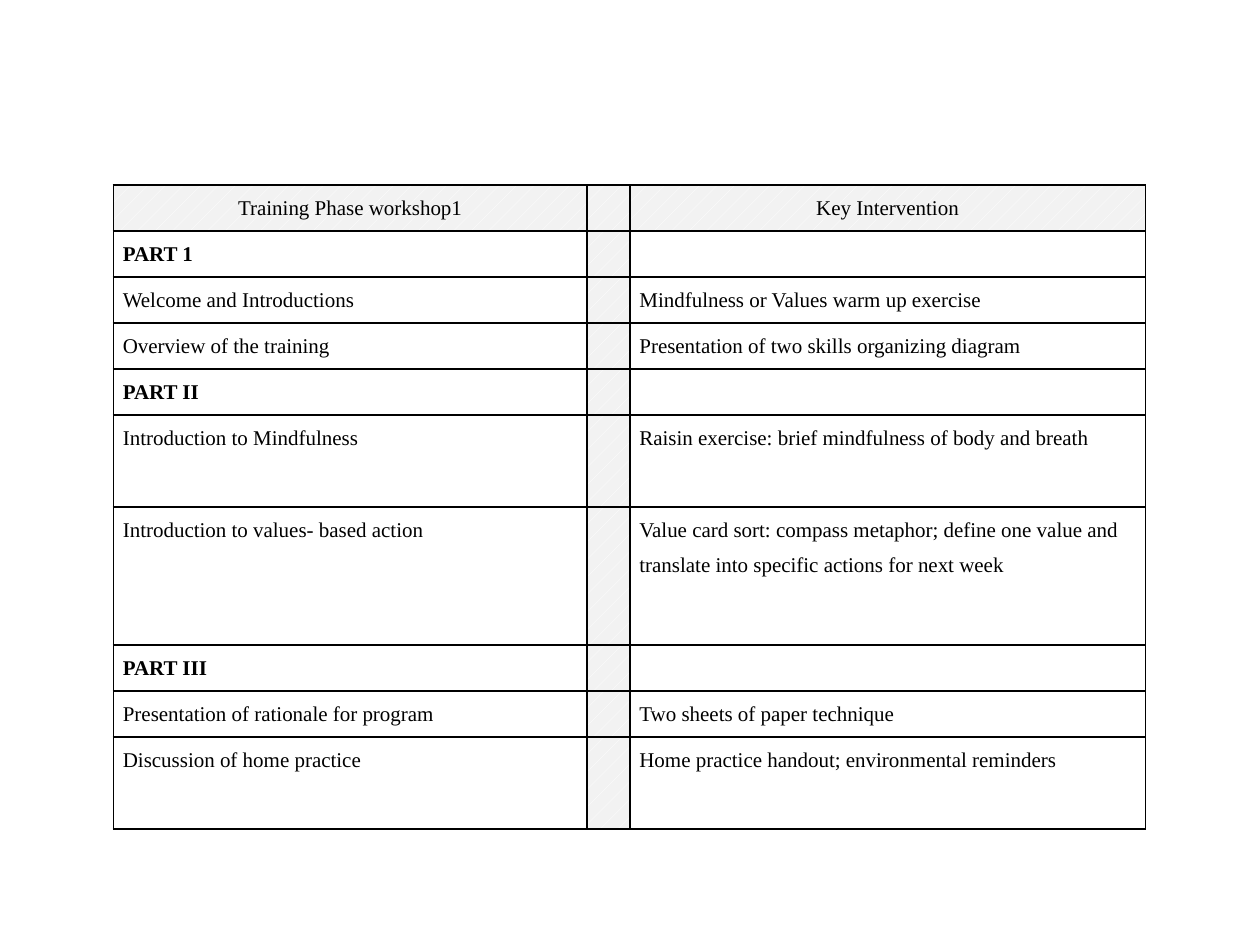
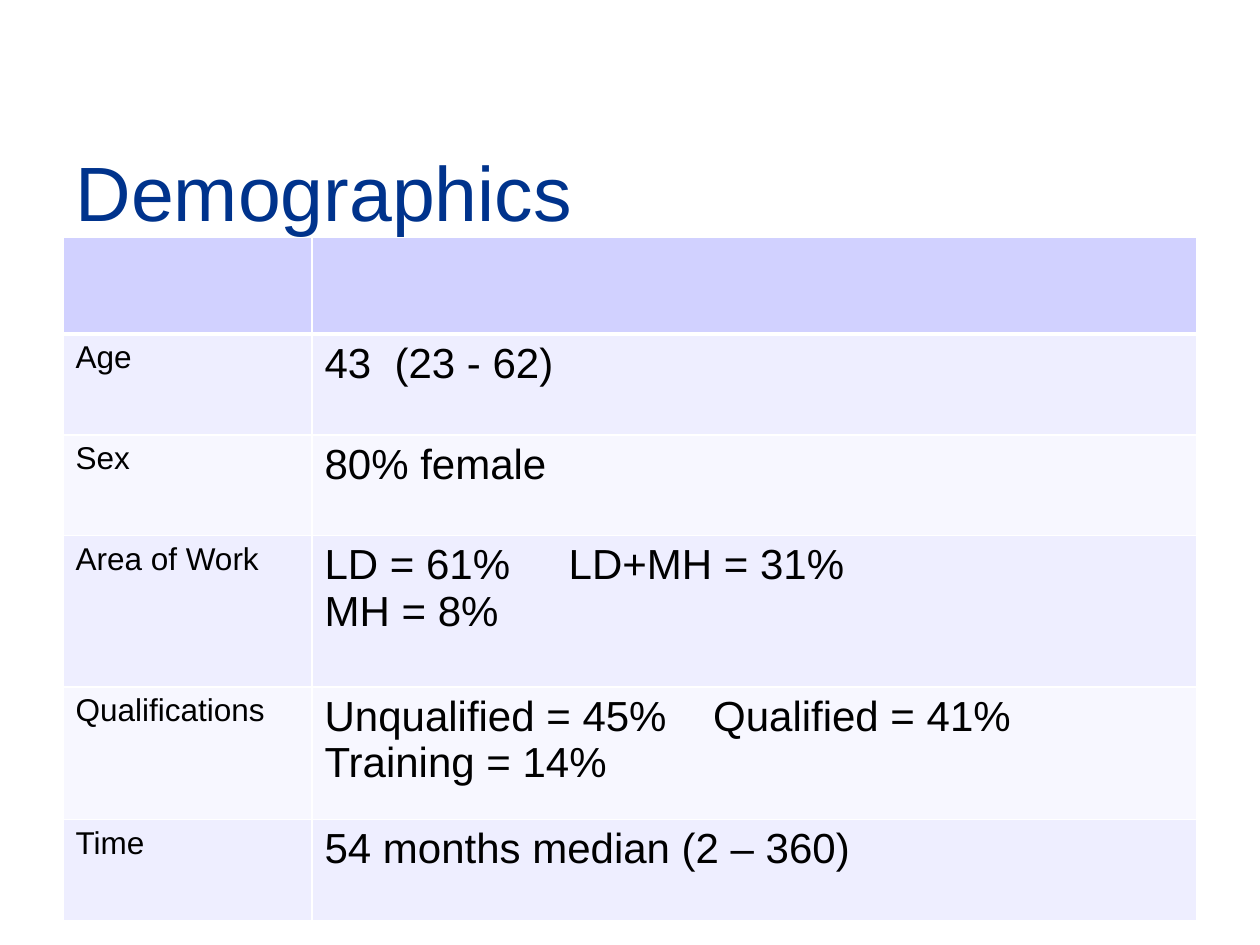
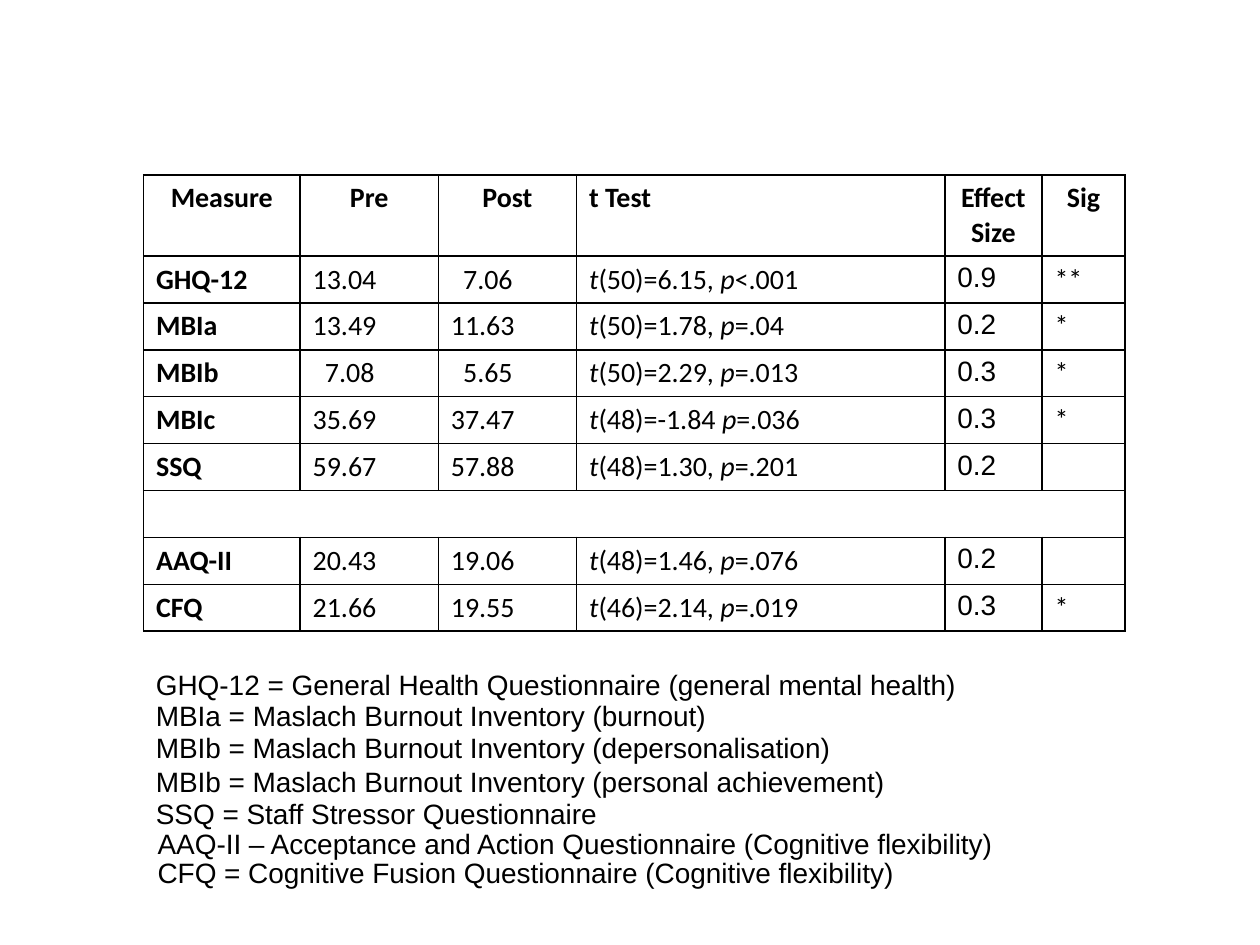
from itertools import groupby

from lxml import etree
from pptx import Presentation
from pptx.dml.color import RGBColor
from pptx.enum.dml import MSO_PATTERN
from pptx.enum.text import MSO_ANCHOR, PP_ALIGN
from pptx.oxml.ns import qn
from pptx.util import Pt

BLACK = RGBColor(0x00, 0x00, 0x00)
WHITE = RGBColor(0xFF, 0xFF, 0xFF)
NAVY = RGBColor(0x00, 0x33, 0x8C)
GREY = RGBColor(0xF2, 0xF2, 0xF2)
LAVENDER = RGBColor(0xD1, 0xD1, 0xFF)
BAND_DARK = RGBColor(0xEE, 0xEE, 0xFF)
BAND_LIGHT = RGBColor(0xF7, 0xF7, 0xFF)

LEFT, CENTER = PP_ALIGN.LEFT, PP_ALIGN.CENTER
TOP = MSO_ANCHOR.TOP
DOTTED = MSO_PATTERN.PERCENT_5

TITLE_ONLY, BLANK = 5, 6

WORKSHOP = [
    # left text, right text, height in row units
    ("Training Phase workshop1", "Key Intervention", 1),
    ("PART 1", "", 1),
    ("Welcome and Introductions", "Mindfulness or Values warm up exercise", 1),
    ("Overview of the training", "Presentation of two skills organizing diagram", 1),
    ("PART II", "", 1),
    ("Introduction to Mindfulness",
     "Raisin exercise: brief mindfulness of body and breath", 2),
    ("Introduction to values- based action",
     "Value card sort: compass metaphor; define one value and "
     "translate into specific actions for next week", 3),
    ("PART III", "", 1),
    ("Presentation of rationale for program", "Two sheets of paper technique", 1),
    ("Discussion of home practice",
     "Home practice handout; environmental reminders", 2),
]

DEMOGRAPHICS = [
    # label, value, row height, tab stop
    ("", "", 55.2, None),
    ("Age", "43\t(23 - 62)", 57.6, 40),
    ("Sex", "80% female", 57.6, None),
    ("Area of Work", "LD = 61%\tLD+MH = 31%\nMH = 8%", 86.4, 139.5),
    ("Qualifications", "Unqualified = 45%\tQualified = 41%\nTraining = 14%", 75.8, 222),
    ("Time", "54 months median (2 – 360)", 57.6, None),
]

MEASURES = [
    ("Measure", "Pre", "Post", "t Test", "Effect Size", "Sig"),
    ("GHQ-12", "13.04", "7.06", "t(50)=6.15, p<.001", "0.9", "**"),
    ("MBIa", "13.49", "11.63", "t(50)=1.78, p=.04", "0.2", "*"),
    ("MBIb", "7.08", "5.65", "t(50)=2.29, p=.013", "0.3", "*"),
    ("MBIc", "35.69", "37.47", "t(48)=-1.84 p=.036", "0.3", "*"),
    ("SSQ", "59.67", "57.88", "t(48)=1.30, p=.201", "0.2", ""),
    ("",) * 6,
    ("AAQ-II", "20.43", "19.06", "t(48)=1.46, p=.076", "0.2", ""),
    ("CFQ", "21.66", "19.55", "t(46)=2.14, p=.019", "0.3", "*"),
]
SPACER_ROW = 6
MEASURE, PRE, POST, T_TEST, EFFECT, SIG = range(6)

ABBREVIATIONS = [
    # text, left, top, width, height
    ("GHQ-12 = General Health Questionnaire (general mental health)", 82, 378, 567, 27),
    ("MBIa = Maslach Burnout Inventory (burnout)", 82, 395.5, 516, 70),
    ("MBIb = Maslach Burnout Inventory (depersonalisation)", 82, 414, 595, 55),
    ("MBIb = Maslach Burnout Inventory (personal achievement)", 82, 433.5, 607, 55),
    ("SSQ = Staff Stressor Questionnaire", 82, 451.5, 465, 55),
    ("AAQ-II – Acceptance and Action Questionnaire (Cognitive flexibility)",
     83, 469, 554, 55),
    ("CFQ = Cognitive Fusion Questionnaire (Cognitive flexibility)", 83, 485.3, 521, 54.5),
]


def write_text(frame, text, font="Arial", size=16, color=BLACK, bold=False,
               italics="", align=LEFT, spacing=None, indent=0, tab=None):
    """Fill a text frame, one paragraph a line; characters in italics are slanted."""
    for number, line in enumerate(text.split("\n")):
        paragraph = frame.add_paragraph() if number else frame.paragraphs[0]
        paragraph.alignment = align
        properties = paragraph._p.get_or_add_pPr()
        if indent:
            properties.set("marL", str(Pt(indent)))
        if tab:
            stops = etree.SubElement(properties, qn("a:tabLst"))
            etree.SubElement(stops, qn("a:tab"), pos=str(Pt(tab)), algn="l")
        if spacing:
            paragraph.line_spacing = spacing
        for italic, letters in groupby(line, lambda letter: letter in italics):
            run = paragraph.add_run()
            run.text = "".join(letters)
            run.font.name = font
            run.font.size = Pt(size)
            run.font.bold = bold
            run.font.italic = italic
            run.font.color.rgb = color
        if not line:
            etree.SubElement(paragraph._p, qn("a:endParaRPr"), sz=str(size * 100))


class Deck:
    def __init__(self):
        self.presentation = Presentation()
        self.presentation.slide_width = Pt(720)
        self.presentation.slide_height = Pt(540)
        self.slide = None

    def start_slide(self, layout=BLANK):
        layouts = self.presentation.slide_layouts
        self.slide = self.presentation.slides.add_slide(layouts[layout])

    def title(self, text):
        title = self.slide.shapes.title
        title.left, title.top, title.width, title.height = Pt(36), Pt(21.6), Pt(648), Pt(90)
        frame = title.text_frame
        frame.vertical_anchor = TOP
        frame.margin_top = Pt(61)
        write_text(frame, text, size=44, color=NAVY)

    def text_box(self, text, left, top, width, height):
        box = self.slide.shapes.add_textbox(Pt(left), Pt(top), Pt(width), Pt(height))
        box.text_frame.word_wrap = True
        write_text(box.text_frame, text)

    def table(self, left, top, widths, heights):
        frame = self.slide.shapes.add_table(
            len(heights), len(widths), Pt(left), Pt(top), Pt(sum(widths)), Pt(sum(heights)))
        table = frame.table
        table.first_row = table.horz_banding = False
        for column, width in zip(table.columns, widths):
            column.width = Pt(width)
        for row, height in zip(table.rows, heights):
            row.height = Pt(height)
        return table

    def cell(self, cell, text, fill=None, pattern=None, line=BLACK, bottom=1,
             inset=(7.2, 3.6), **text_format):
        cell.margin_left = cell.margin_right = Pt(inset[0])
        cell.margin_top = cell.margin_bottom = Pt(inset[1])
        if pattern:
            cell.fill.patterned()
            cell.fill.pattern = pattern
            cell.fill.fore_color.rgb = WHITE
            cell.fill.back_color.rgb = fill
        elif fill:
            cell.fill.solid()
            cell.fill.fore_color.rgb = fill
        else:
            cell.fill.background()
        self.borders(cell, line, bottom)
        write_text(cell.text_frame, text, **text_format)

    def borders(self, cell, color, bottom):
        properties = cell._tc.get_or_add_tcPr()
        for place, side in enumerate("LRTB"):
            width = bottom if side == "B" else 1
            border = etree.Element(qn(f"a:ln{side}"), w=str(Pt(width)))
            solid = etree.SubElement(border, qn("a:solidFill"))
            etree.SubElement(solid, qn("a:srgbClr"), val=str(color))
            properties.insert(place, border)


def workshop_slide(deck):
    deck.start_slide()
    heights = [26.3 * units for _, _, units in WORKSHOP]
    table = deck.table(64.8, 105.8, [270.7, 24.5, 294.5], heights)
    for row, (phase, intervention, _) in enumerate(WORKSHOP):
        header = row == 0
        for column, text in enumerate((phase, "", intervention)):
            shaded = header or column == 1
            deck.cell(table.cell(row, column), text,
                      fill=GREY if shaded else None, pattern=DOTTED if shaded else None,
                      inset=(5.4, 0), font="Times New Roman", size=12,
                      bold=text.startswith("PART"), spacing=1.5,
                      align=CENTER if header else LEFT)


def demographics_slide(deck):
    deck.start_slide(TITLE_ONLY)
    deck.title("Demographics")
    heights = [height for _, _, height, _ in DEMOGRAPHICS]
    table = deck.table(36, 135.7, [142.3, 505.7], heights)
    for row, (label, value, _, tab) in enumerate(DEMOGRAPHICS):
        band = BAND_DARK if row % 2 else BAND_LIGHT
        look = {"fill": band if row else LAVENDER, "line": WHITE, "bottom": 1 if row else 3}
        deck.cell(table.cell(row, 0), label, size=18, **look)
        deck.cell(table.cell(row, 1), value, size=24, tab=tab, **look)


def results_slide(deck):
    deck.start_slide()
    heights = [46] + [26.7] * (len(MEASURES) - 1)
    table = deck.table(82, 100, [89.5, 79, 79, 210.5, 55.5, 47.5], heights)
    table.cell(SPACER_ROW, MEASURE).merge(table.cell(SPACER_ROW, SIG))
    for row, values in enumerate(MEASURES):
        header = row == 0
        for column, text in enumerate(values):
            one_digit = column in (PRE, POST) and text.find(".") == 1
            deck.cell(table.cell(row, column), text,
                      font="Arial" if column == EFFECT and not header else "Calibri",
                      bold=header or column == MEASURE,
                      italics="tp" if column == T_TEST and not header else "",
                      align=CENTER if header and column != T_TEST else LEFT,
                      indent=7 if one_digit else 0)
    for abbreviation in ABBREVIATIONS:
        deck.text_box(*abbreviation)


def main():
    deck = Deck()
    workshop_slide(deck)
    demographics_slide(deck)
    results_slide(deck)
    deck.presentation.save("out.pptx")


if __name__ == "__main__":
    main()
